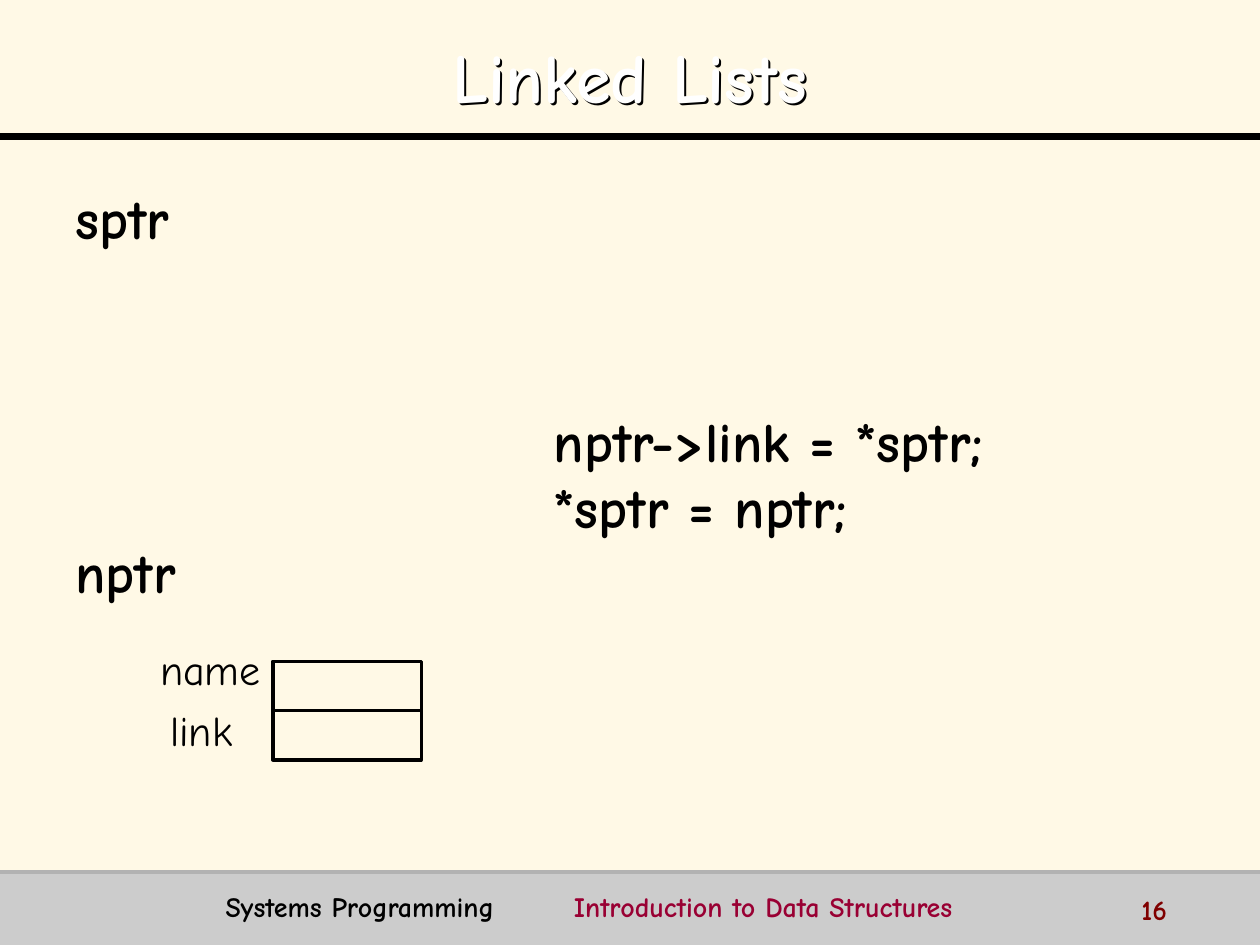
import dataclasses
import pptx
import pptx.util
import pptx.dml.color
import pptx.enum.shapes
import pptx.enum.text
import pptx.oxml
import pptx.oxml.ns

Pt = pptx.util.Pt
Rgb = pptx.dml.color.RGBColor.from_string
Align = pptx.enum.text.PP_ALIGN
Kind = pptx.enum.shapes
SHADE = (
    f'<a:effectLst {pptx.oxml.ns.nsdecls("a")}>'
    '<a:outerShdw dist="20500" dir="2700000" algn="ctr" rotWithShape="0">'
    '<a:srgbClr val="000000"/></a:outerShdw></a:effectLst>'
)


@dataclasses.dataclass
class Theme:
    face: str = "Comic Neue"
    paper: str = "FFF9E6"
    ink: str = "000000"
    white: str = "FFFFFF"
    band: str = "CCCCCC"
    rule: str = "B2B2B2"
    topic: str = "990033"
    page: str = "800000"
    title: int = 40
    body: int = 32
    label: int = 24
    foot: int = 16


class Deck:
    cols, rows = 100, 75

    def __init__(self, theme):
        self.theme = theme
        self.file = pptx.Presentation()
        self.file.slide_width = pptx.util.Inches(10)
        self.file.slide_height = pptx.util.Inches(7.5)
        self.slide = self.file.slides.add_slide(self.file.slide_layouts[6])
        back = self.slide.background.fill
        back.solid()
        back.fore_color.rgb = Rgb(theme.paper)

    def grid(self, *cells):
        steps = (self.file.slide_width / self.cols, self.file.slide_height / self.rows)
        return [round(cell * steps[i % 2]) for i, cell in enumerate(cells)]

    def rect(self, left, top, wide, high, fill=None, line=None):
        shape = self.slide.shapes.add_shape(
            Kind.MSO_SHAPE.RECTANGLE, *self.grid(left, top, wide, high))
        shape.shadow.inherit = False
        if fill:
            shape.fill.solid()
            shape.fill.fore_color.rgb = Rgb(fill)
        else:
            shape.fill.background()
        if line:
            shape.line.color.rgb = Rgb(line)
            shape.line.width = Pt(2)
        else:
            shape.line.fill.background()

    def rule(self, row, color, width):
        line = self.slide.shapes.add_connector(
            Kind.MSO_CONNECTOR.STRAIGHT, *self.grid(0, row, self.cols, row))
        line.line.color.rgb = Rgb(color)
        line.line.width = Pt(width)
        line._element.spPr.append(pptx.oxml.parse_xml(
            f'<a:effectLst {pptx.oxml.ns.nsdecls("a")}/>'))

    def text(self, words, left, mid, wide, size, color=None, bold=True,
             align=Align.LEFT, space=1.0, shade=False):
        high = 6
        box = self.slide.shapes.add_textbox(
            *self.grid(left, mid - high / 2, wide, high))
        if shade:
            box._element.spPr.append(pptx.oxml.parse_xml(SHADE))
        frame = box.text_frame
        look = dict(word_wrap=True, margin_left=0, margin_right=0, margin_top=0,
                    margin_bottom=0, vertical_anchor=pptx.enum.text.MSO_ANCHOR.MIDDLE)
        for name, value in look.items():
            setattr(frame, name, value)
        para = frame.paragraphs[0]
        para.alignment = align
        para.line_spacing = space
        run = para.add_run()
        run.text = words
        for name, value in dict(name=self.theme.face, size=Pt(size), bold=bold).items():
            setattr(run.font, name, value)
        run.font.color.rgb = Rgb(color or self.theme.ink)


def main():
    look = Theme()
    deck = Deck(look)
    deck.rect(0, 69.2, 100, 5.8, fill=look.band)
    deck.rule(10.8, look.ink, 4)
    deck.rule(69.2, look.rule, 2)
    deck.text("Linked Lists", 2, 5.65, 96, look.title, look.white,
              align=Align.CENTER, space=1.1, shade=True)

    for words, left, mid, wide in (
            ("sptr", 6, 17.27, 20),
            ("nptr->link = *sptr;", 43.95, 34.95, 50),
            ("*sptr = nptr;", 43.95, 40.15, 50),
            ("nptr", 6, 45.33, 20)):
        deck.text(words, left, mid, wide, look.body)

    cell = 3.9
    for i, (name, left, mid) in enumerate((("name", 12.7, 53.05), ("link", 13.5, 57.95))):
        deck.text(name, left, mid, 8.9, look.label, bold=False)
        deck.rect(21.65, 52.5 + i * cell, 11.8, cell, line=look.ink)

    for words, left, mid, wide, color in (
            ("Systems Programming", 17.9, 71.9, 26, look.ink),
            ("Introduction to Data Structures", 45.55, 71.9, 40, look.topic),
            ("16", 90.6, 72.2, 8, look.page)):
        deck.text(words, left, mid, wide, look.foot, color)
    deck.file.save("out.pptx")


if __name__ == "__main__":
    main()
